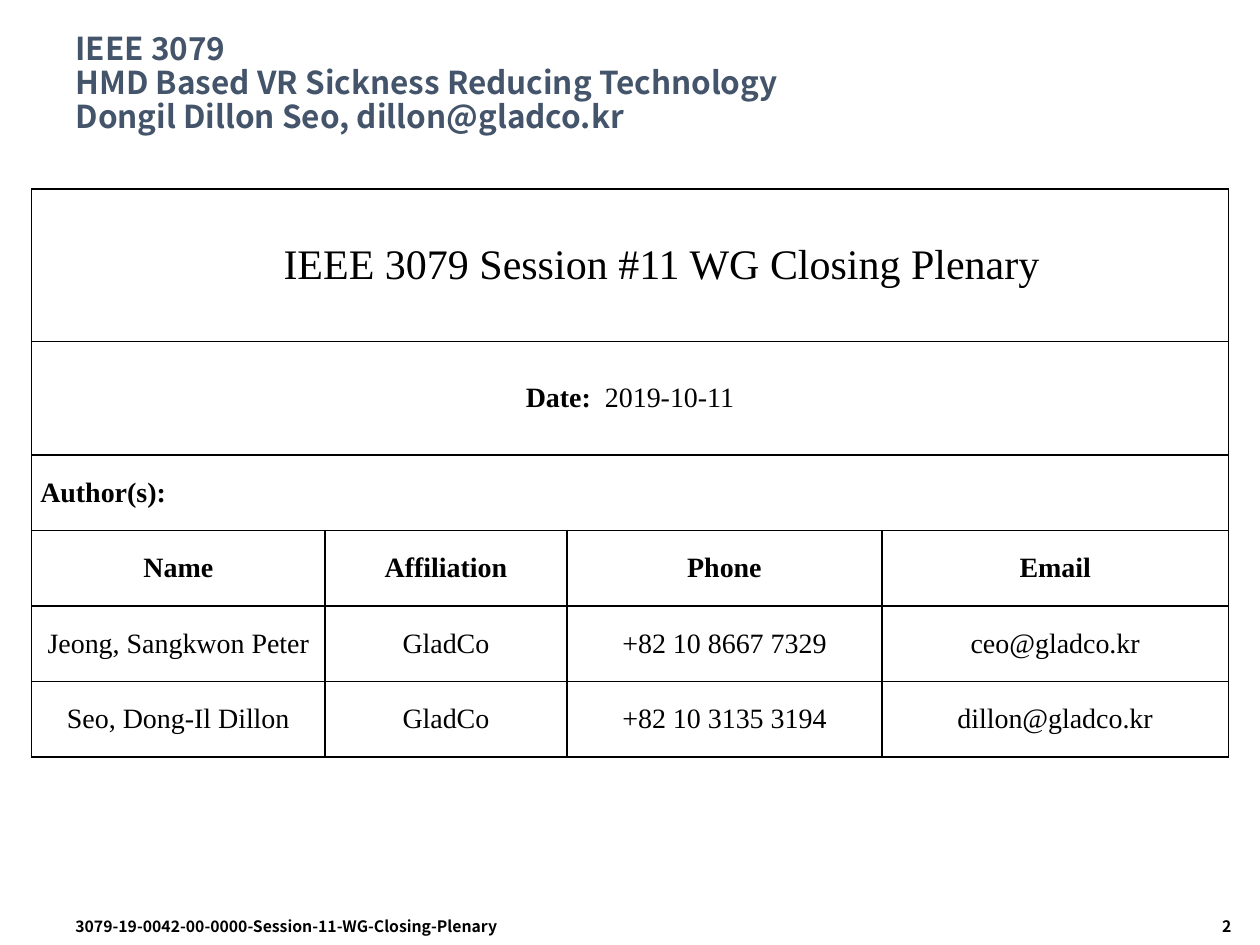
from lxml.etree import SubElement
from pptx import Presentation
from pptx.dml.color import RGBColor
from pptx.enum.text import MSO_ANCHOR, MSO_AUTO_SIZE, PP_ALIGN
from pptx.oxml.ns import qn
from pptx.util import Inches, Pt


def color(code):
    return RGBColor.from_string(code)


class Deck:
    sans = "Noto Sans CJK KR"
    serif = "Times New Roman"
    ink = "000000"
    slate = "44546A"

    def __init__(self):
        self.prs = Presentation()
        self.prs.slide_width = Inches(10)
        self.prs.slide_height = Inches(7.5)
        self.slide = self.prs.slides.add_slide(self.prs.slide_layouts[5])

    def style(self, para, font, size, bold, code=ink):
        for run in para.runs:
            run.font.name = font
            run.font.size = Pt(size)
            run.font.bold = bold
            run.font.color.rgb = color(code)

    def title(self, text):
        shape = self.slide.shapes.title
        shape.left, shape.top = Inches(0.5), Inches(0.17)
        shape.width, shape.height = Inches(9), Inches(1)
        frame = shape.text_frame
        frame.text = text
        frame.auto_size = MSO_AUTO_SIZE.NONE
        frame.vertical_anchor = MSO_ANCHOR.MIDDLE
        para = frame.paragraphs[0]
        para.alignment = PP_ALIGN.LEFT
        para.line_spacing = 0.9
        self.style(para, self.sans, 18, True, self.slate)

    def footer(self, text, left, width, align):
        box = self.slide.shapes.add_textbox(
            Inches(left), Inches(7.23), Inches(width), Inches(0.27))
        frame = box.text_frame
        frame.word_wrap = True
        frame.text = text
        para = frame.paragraphs[0]
        para.alignment = align
        self.style(para, self.sans, 9, True)

    def table(self, rows, widths, heights):
        """Rows with a single entry span the full width."""
        grid = self.slide.shapes.add_table(
            len(rows), len(widths), Inches(0.25), Inches(1.5),
            Inches(sum(widths)), Inches(sum(heights))).table
        grid.first_row = grid.horz_banding = False
        for col, width in zip(grid.columns, widths):
            col.width = Inches(width)
        for row, height, texts in zip(grid.rows, heights, rows):
            row.height = Inches(height)
            for cell in row.cells:
                cell.fill.background()
                self.border(cell)
            if len(texts) == 1:
                row.cells[0].merge(row.cells[len(widths) - 1])
            for cell, text in zip(row.cells, texts):
                self.fill(cell, text)
        return grid

    def fill(self, cell, text):
        cell.vertical_anchor = MSO_ANCHOR.MIDDLE
        cell.margin_left = cell.margin_right = Inches(0.07)
        cell.margin_top = cell.margin_bottom = 0
        cell.text_frame.text = text
        para = cell.text_frame.paragraphs[0]
        para.alignment = PP_ALIGN.CENTER
        self.style(para, self.serif, 16, False)

    def border(self, cell):
        props = cell._tc.get_or_add_tcPr()
        for spot, side in enumerate(("lnL", "lnR", "lnT", "lnB")):
            line = SubElement(props, qn(f"a:{side}"), w=str(Pt(1)))
            solid = SubElement(line, qn("a:solidFill"))
            SubElement(solid, qn("a:srgbClr"), val=self.ink)
            props.insert(spot, line)


def main():
    deck = Deck()
    deck.title("IEEE 3079\vHMD Based VR Sickness Reducing Technology\v"
               "Dongil Dillon Seo, dillon@gladco.kr")
    rows = [
        ["IEEE 3079 Session #11 WG Closing Plenary"],
        ["Date:"],
        ["Author(s):"],
        ["Name", "Affiliation", "Phone", "Email"],
        ["Jeong, Sangkwon Peter", "GladCo", "+82 10 8667 7329", "ceo@gladco.kr"],
        ["Seo, Dong-Il Dillon", "GladCo", "+82 10 3135 3194", "dillon@gladco.kr"],
    ]
    grid = deck.table(rows, [2.33, 1.92, 2.5, 2.75], [1.21, 0.9] + [0.6] * 4)

    topic, date, author = [grid.cell(row, 0).text_frame.paragraphs[0]
                           for row in range(3)]
    deck.style(topic, deck.serif, 24, False)
    topic._p.get_or_add_pPr().set("marL", str(Inches(0.5)))
    topic.space_after = date.space_after = Pt(12)
    date.add_run().text = "  2019-10-11"
    deck.style(date, deck.serif, 16, False)
    date.runs[0].font.bold = True
    author.alignment = PP_ALIGN.LEFT
    deck.style(author, deck.serif, 16, True)
    for cell in grid.rows[3].cells:
        deck.style(cell.text_frame.paragraphs[0], deck.serif, 16, True)

    deck.footer("2", 8.25, 1.62, PP_ALIGN.RIGHT)
    deck.footer("3079-19-0042-00-0000-Session-11-WG-Closing-Plenary",
                0.5, 4.42, PP_ALIGN.LEFT)
    deck.prs.save("out.pptx")


if __name__ == "__main__":
    main()
